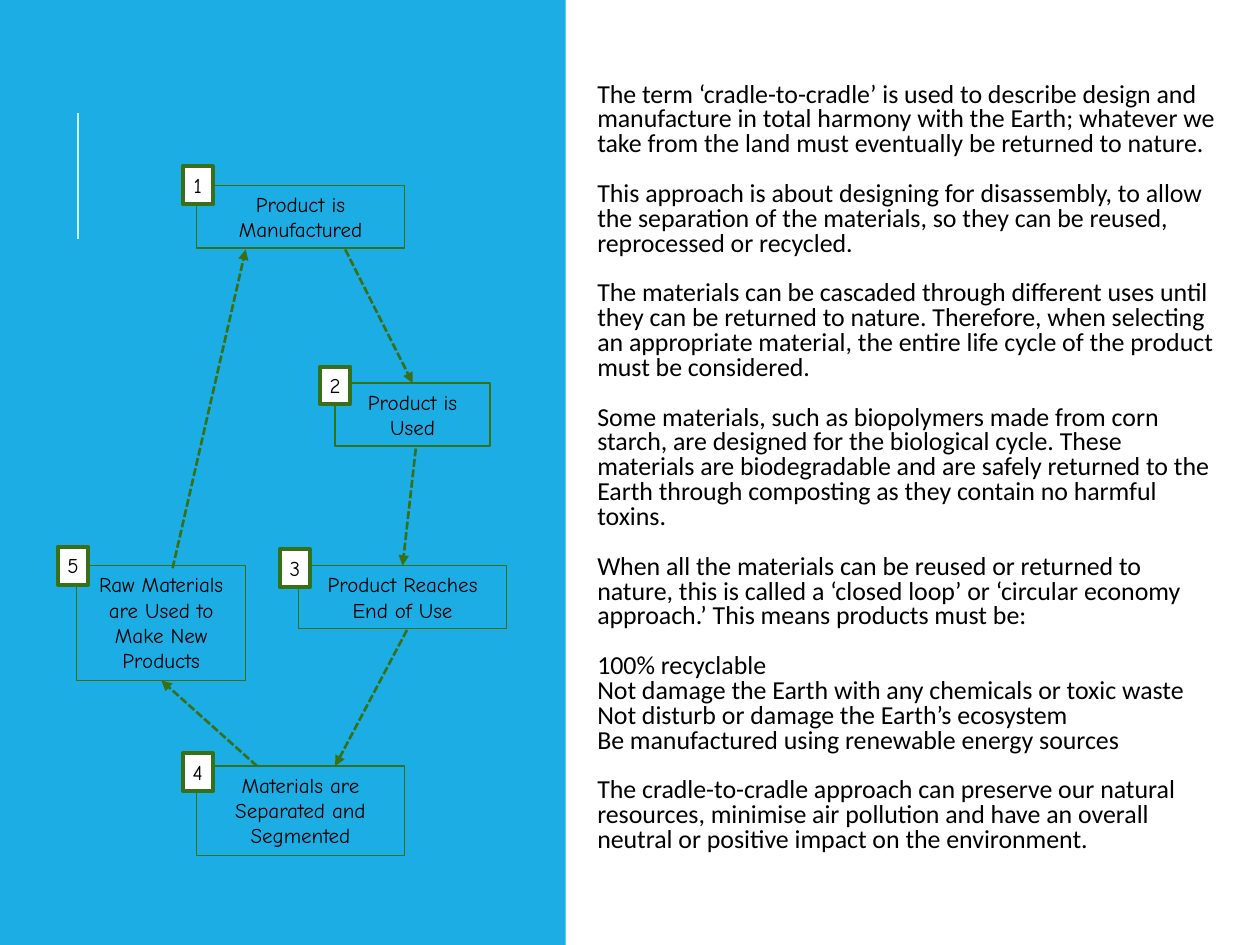
from dataclasses import dataclass

from lxml.etree import SubElement
from pptx import Presentation
from pptx.dml.color import RGBColor
from pptx.enum.dml import MSO_LINE
from pptx.enum.shapes import MSO_CONNECTOR, MSO_SHAPE
from pptx.enum.text import MSO_ANCHOR, MSO_AUTO_SIZE, PP_ALIGN
from pptx.oxml.ns import qn
from pptx.util import Inches, Pt


@dataclass(frozen=True)
class Theme:
    panel: RGBColor = RGBColor(0x1C, 0xAD, 0xE4)
    accent: RGBColor = RGBColor(0xD2, 0xEF, 0xFA)
    green: RGBColor = RGBColor(0x37, 0x70, 0x16)
    white: RGBColor = RGBColor(0xFF, 0xFF, 0xFF)
    black: RGBColor = RGBColor(0, 0, 0)
    body_font: str = "Calibri"
    step_font: str = "Comic Neue"
    body_size: Pt = Pt(14.8)
    step_size: Pt = Pt(12)
    paragraph_gap: Pt = Pt(14.2)


THEME = Theme()

# Label, step box and number position, in inches from the panel's corner
STEPS = [
    ("Product is Manufactured", (1.56, 1.47, 1.65, 0.5), (1.45, 1.32)),
    ("Product is Used", (2.66, 3.04, 1.23, 0.5), (2.54, 2.91)),
    ("Product Reaches End of Use", (2.37, 4.49, 1.65, 0.5), (2.22, 4.36)),
    ("Materials are Separated and Segmented", (1.56, 6.08, 1.65, 0.71), (1.45, 5.98)),
    ("Raw Materials are Used to Make New Products", (0.61, 4.49, 1.34, 0.91), (0.46, 4.34)),
]
BADGE_SIZE = (0.24, 0.3)

# Start, end, and the (step index, side) that the arrowhead joins, if any
ARROWS = [
    ((2.74, 1.98), (3.27, 3.04), (1, 0)),
    ((3.3, 3.56), (3.2, 4.49), (2, 0)),
    ((3.23, 5), (2.66, 6.08), None),
    ((2.04, 6.08), (1.28, 5.4), (4, 2)),
    ((1.37, 4.51), (1.95, 1.98), None),
]

# Each group is set off by a gap; its lines follow one another closely
BODY_GROUPS = [
    ["The term ‘cradle-to-cradle’ is used to describe design and manufacture in total harmony "
     "with the Earth; whatever we take from the land must eventually be returned to nature."],
    ["This approach is about designing for disassembly, to allow the separation of the "
     "materials, so they can be reused, reprocessed or recycled."],
    ["The materials can be cascaded through different uses until they can be returned to "
     "nature. Therefore, when selecting an appropriate material, the entire life cycle of the "
     "product must be considered."],
    ["Some materials, such as biopolymers made from corn starch, are designed for the "
     "biological cycle. These materials are biodegradable and are safely returned to the Earth "
     "through composting as they contain no harmful toxins."],
    ["When all the materials can be reused or returned to nature, this is called a ‘closed "
     "loop’ or ‘circular economy approach.’ This means products must be:"],
    ["100% recyclable",
     "Not damage the Earth with any chemicals or toxic waste",
     "Not disturb or damage the Earth’s ecosystem",
     "Be manufactured using renewable energy sources"],
    ["The cradle-to-cradle approach can preserve our natural resources, minimise air pollution "
     "and have an overall neutral or positive impact on the environment."],
]


def inches(values):
    return [Inches(v) for v in values]


def format_font(font, name, size):
    font.name, font.size = name, size
    font.color.rgb = THEME.black


def add_rect(s, box, fill=None, line=None, weight=0.75):
    rect = s.shapes.add_shape(MSO_SHAPE.RECTANGLE, *inches(box))
    rect.shadow.inherit = False
    if fill is None:
        rect.fill.background()
    else:
        rect.fill.solid()
        rect.fill.fore_color.rgb = fill
    if line is None:
        rect.line.fill.background()
    else:
        rect.line.color.rgb = line
        rect.line.width = Pt(weight)
    return rect


def label(rect, text):
    tf = rect.text_frame
    tf.text = text
    tf.word_wrap = True
    tf.auto_size = MSO_AUTO_SIZE.SHAPE_TO_FIT_TEXT
    tf.vertical_anchor = MSO_ANCHOR.TOP
    p = tf.paragraphs[0]
    p.alignment = PP_ALIGN.CENTER
    format_font(p.runs[0].font, THEME.step_font, THEME.step_size)


def add_line(s, start, end, color):
    line = s.shapes.add_connector(MSO_CONNECTOR.STRAIGHT, *inches(start + end))
    line.line.color.rgb = color
    line.line.width = Pt(1.5)
    SubElement(line._element.spPr, qn("a:effectLst"))
    return line


def add_arrow(s, start, end):
    arrow = add_line(s, start, end, THEME.green)
    arrow.line.dash_style = MSO_LINE.SQUARE_DOT
    ln = arrow.line._get_or_add_ln()
    ln.find(qn("a:prstDash")).set("val", "sysDash")
    SubElement(ln, qn("a:tailEnd"), type="triangle")
    return arrow


def add_panel(s, box):
    x, y = box[:2]
    add_rect(s, box, THEME.panel)
    add_line(s, (x + 0.62, y + 1.9), (x + 0.62, y + 0.9), THEME.accent)


def add_cycle(s, box):
    """Draw the numbered steps and the arrows that lead round them."""
    x, y = box[:2]
    steps = []
    for text, (left, top, width, height), _ in STEPS:
        step = add_rect(s, (x + left, y + top, width, height), line=THEME.green)
        label(step, text)
        steps.append(step)
    for start, end, joint in ARROWS:
        arrow = add_arrow(s, (x + start[0], y + start[1]), (x + end[0], y + end[1]))
        if joint:
            index, side = joint
            arrow.end_connect(steps[index], side)
    for number, (_, _, (left, top)) in enumerate(STEPS, 1):
        badge = add_rect(s, (x + left, y + top, *BADGE_SIZE), THEME.white, THEME.green, 2.25)
        label(badge, str(number))
        badge.text_frame.margin_left = badge.text_frame.margin_right = 0


def add_body(s, box):
    body = s.placeholders[1]
    body.left, body.top, body.width, body.height = inches(box)
    tf = body.text_frame
    tf.word_wrap = True
    tf.auto_size = MSO_AUTO_SIZE.NONE
    tf.vertical_anchor = MSO_ANCHOR.TOP
    tf.margin_left = tf.margin_right = tf.margin_bottom = Inches(0.05)
    tf.margin_top = Inches(0.25)
    tf.text = "\n".join(line for group in BODY_GROUPS for line in group)
    paragraphs = iter(tf.paragraphs)
    for g, group in enumerate(BODY_GROUPS):
        for i in range(len(group)):
            p = next(paragraphs)
            pPr = p._p.get_or_add_pPr()
            pPr.set("marL", "0")
            pPr.set("indent", "0")
            SubElement(pPr, qn("a:buNone"))
            p.alignment = PP_ALIGN.LEFT
            p.line_spacing = 0.8
            p.space_before = THEME.paragraph_gap if g and i == 0 else Pt(0)
            p.space_after = Pt(0)
            format_font(p.runs[0].font, THEME.body_font, THEME.body_size)


def main():
    prs = Presentation()
    prs.slide_width, prs.slide_height = Inches(10), Inches(7.5)
    s = prs.slides.add_slide(prs.slide_layouts.get_by_name("Title and Content"))
    title = s.shapes.title._element
    title.getparent().remove(title)
    panel = (0, 0, 4.49, 7.5)
    add_panel(s, panel)
    add_body(s, (4.69, 0.41, 5.04, 7.09))
    add_cycle(s, panel)
    prs.save("out.pptx")


if __name__ == "__main__":
    main()
